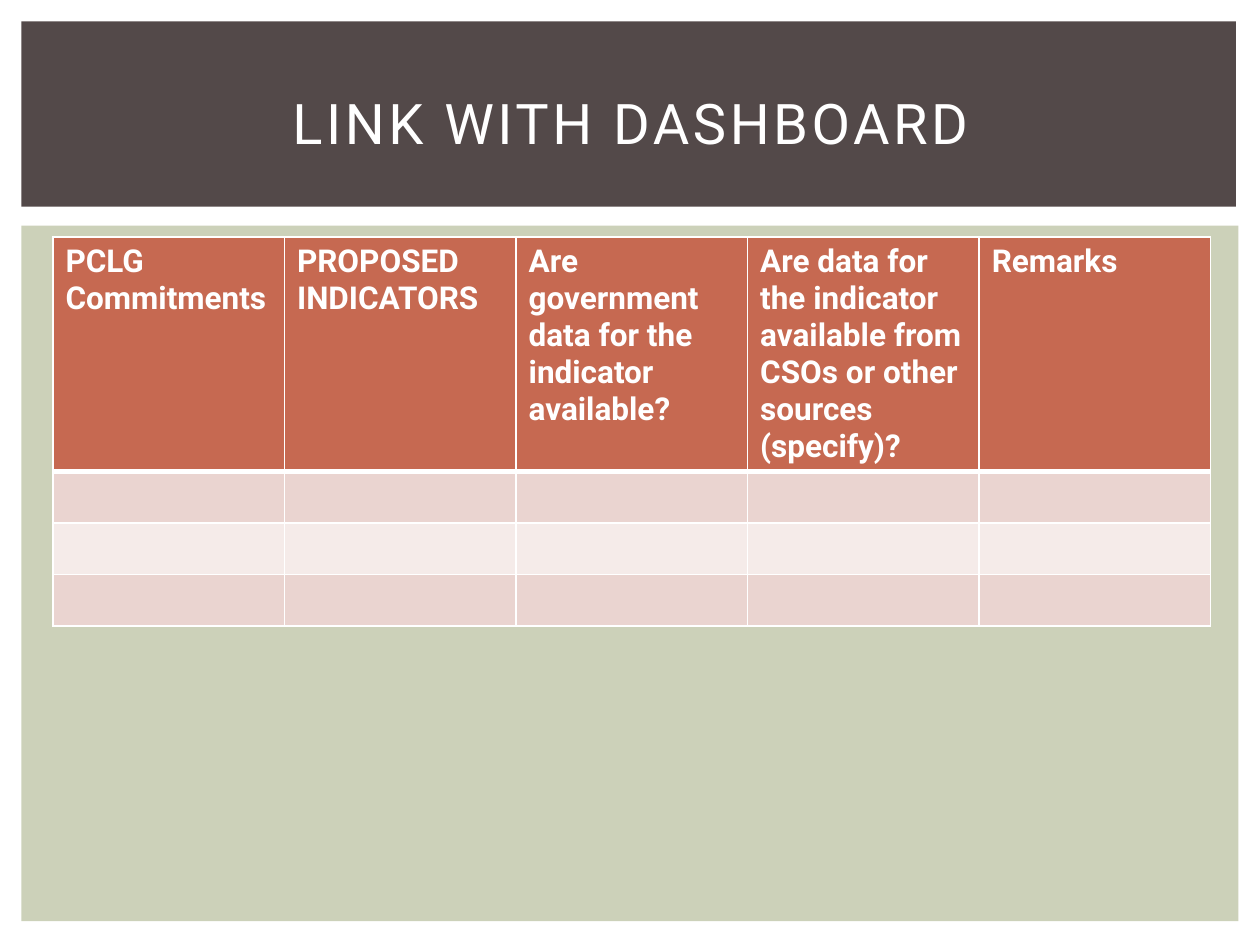
from lxml.etree import SubElement
from pptx import Presentation
from pptx.dml.color import RGBColor
from pptx.enum.shapes import MSO_SHAPE
from pptx.enum.text import MSO_ANCHOR, MSO_AUTO_SIZE, PP_ALIGN
from pptx.oxml.ns import qn
from pptx.util import Inches, Pt

COLORS = {
    "banner": "534949",
    "panel": "CCD1B9",
    "header": "C66951",
    "band_dark": "EAD4D0",
    "band_light": "F5EBE9",
    "white": "FFFFFF",
}
FONT = "Roboto"
HEADINGS = [
    "PCLG Commitments",
    "PROPOSED INDICATORS",
    "Are government data for the indicator available?",
    "Are data for the indicator available from CSOs or other sources (specify)?",
    "Remarks",
]
BODY_ROWS = 3
HEADER_HEIGHT, ROW_HEIGHT = 1.86, 0.41


def rgb(name):
    return RGBColor.from_string(COLORS[name])


def write(frame, text, size=18, color="white", bold=False, align=PP_ALIGN.LEFT, spacing=0):
    """Put one formatted run in a text frame; spacing is in points."""
    paragraph = frame.paragraphs[0]
    paragraph.alignment = align
    run = paragraph.add_run()
    run.text = text
    run.font.name = FONT
    run.font.size = Pt(size)
    run.font.bold = bold
    run.font.color.rgb = rgb(color)
    if spacing:
        run.font._element.set("spc", str(spacing * 100))


def add_block(slide, box, color):
    block = slide.shapes.add_shape(MSO_SHAPE.RECTANGLE, *map(Inches, box))
    block.shadow.inherit = False
    block.fill.solid()
    block.fill.fore_color.rgb = rgb(color)
    block.line.fill.background()


def add_title(slide, box, text):
    title = slide.shapes.title
    title.left, title.top, title.width, title.height = map(Inches, box)
    frame = title.text_frame
    frame.auto_size = MSO_AUTO_SIZE.NONE
    frame.word_wrap = True
    frame.vertical_anchor = MSO_ANCHOR.MIDDLE
    write(frame, text, size=32, align=PP_ALIGN.CENTER, spacing=2)
    title.element.getparent().append(title.element)  # in front of the banner


def style_cell(cell, fill, top=1, bottom=1):
    """Give a cell white borders, with widths in points, and a solid fill."""
    properties = cell._tc.get_or_add_tcPr()
    for side, width in (("L", 1), ("R", 1), ("T", top), ("B", bottom)):
        line = SubElement(properties, qn(f"a:ln{side}"), w=str(Pt(width)))
        solid = SubElement(line, qn("a:solidFill"))
        SubElement(solid, qn("a:srgbClr"), val=COLORS["white"])
    cell.fill.solid()
    cell.fill.fore_color.rgb = rgb(fill)


def add_indicator_table(slide, left, top, width):
    height = HEADER_HEIGHT + BODY_ROWS * ROW_HEIGHT
    table = slide.shapes.add_table(
        BODY_ROWS + 1, len(HEADINGS), *map(Inches, (left, top, width, height))
    ).table
    for column in table.columns:
        column.width = Inches(width / len(HEADINGS))
    for index, row in enumerate(table.rows):
        row.height = Inches(ROW_HEIGHT if index else HEADER_HEIGHT)
        for cell in row.cells:
            if index == 0:
                style_cell(cell, "header", bottom=3)
            else:
                band = "band_dark" if index % 2 else "band_light"
                style_cell(cell, band, top=3 if index == 1 else 1)
    for cell, heading in zip(table.rows[0].cells, HEADINGS):
        write(cell.text_frame, heading, bold=True)


def build_dashboard_slide(deck):
    slide = deck.slides.add_slide(deck.slide_layouts[5])
    add_block(slide, (0.17, 1.79, 9.66, 5.52), "panel")
    add_block(slide, (0.17, 0.17, 9.64, 1.47), "banner")
    add_indicator_table(slide, 0.42, 1.88, 9.19)
    add_title(slide, (0.42, 0.39, 9.17, 1.15), "LINK WITH DASHBOARD")


def main():
    deck = Presentation()
    deck.slide_width, deck.slide_height = Inches(10), Inches(7.5)
    build_dashboard_slide(deck)
    deck.save("out.pptx")


if __name__ == "__main__":
    main()
